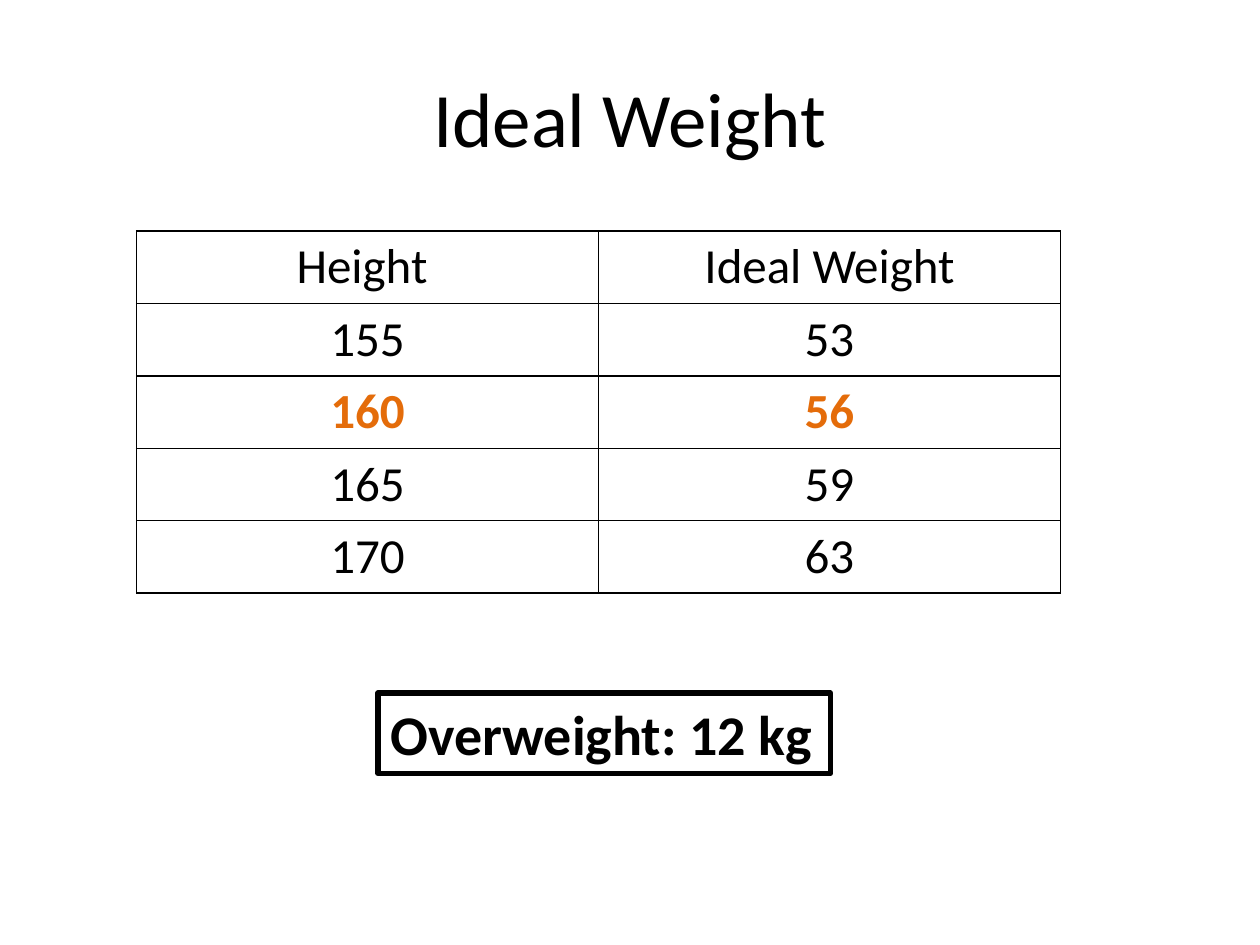
from lxml import etree
from pptx import Presentation
from pptx.dml.color import RGBColor
from pptx.enum.text import MSO_ANCHOR, PP_ALIGN
from pptx.oxml.ns import qn
from pptx.util import Pt

CENTER, LEFT = PP_ALIGN.CENTER, PP_ALIGN.LEFT
MIDDLE = MSO_ANCHOR.MIDDLE

FONT = "Calibri"
BLACK, WHITE, ORANGE = "000000", "FFFFFF", "E46C0A"

TITLE = "Ideal Weight"
WEIGHTS = [
    ("Height ", "Ideal Weight"),
    ("155", "53"),
    ("160", "56"),
    ("165", "59"),
    ("170", "63"),
]
HIGHLIGHTED_ROW = 2
RESULT = "Overweight: 12 kg"

TABLE_LEFT, TABLE_TOP = 78, 132
COLUMN_WIDTH, ROW_HEIGHT = 264, 41.4


def rgb(color):
    return RGBColor.from_string(color)


def write(frame, text, size, color=BLACK, bold=False, align=CENTER):
    frame.text = text
    paragraph = frame.paragraphs[0]
    paragraph.alignment = align
    font = paragraph.runs[0].font
    font.name, font.size, font.bold = FONT, Pt(size), bold
    font.color.rgb = rgb(color)


def add_borders(cell, color, width):
    properties = cell._tc.get_or_add_tcPr()
    for position, side in enumerate(("a:lnL", "a:lnR", "a:lnT", "a:lnB")):
        line = etree.Element(qn(side), w=str(Pt(width)))
        fill = etree.SubElement(line, qn("a:solidFill"))
        etree.SubElement(fill, qn("a:srgbClr"), val=color)
        properties.insert(position, line)


prs = Presentation()
prs.slide_width, prs.slide_height = Pt(720), Pt(540)
slide = prs.slides.add_slide(prs.slide_layouts[6])

title = slide.shapes.add_textbox(Pt(36), Pt(21.6), Pt(648), Pt(90))
title.text_frame.word_wrap = True
title.text_frame.vertical_anchor = MIDDLE
write(title.text_frame, TITLE, 44)

column_count, row_count = len(WEIGHTS[0]), len(WEIGHTS)
table = slide.shapes.add_table(
    row_count, column_count, Pt(TABLE_LEFT), Pt(TABLE_TOP),
    Pt(COLUMN_WIDTH * column_count), Pt(ROW_HEIGHT * row_count),
).table
table.first_row = table.horz_banding = False
for r, values in enumerate(WEIGHTS):
    highlighted = r == HIGHLIGHTED_ROW
    for c, value in enumerate(values):
        cell = table.cell(r, c)
        cell.fill.background()
        add_borders(cell, BLACK, 1)
        write(cell.text_frame, value, 28, ORANGE if highlighted else BLACK, highlighted)

result = slide.shapes.add_textbox(Pt(216), Pt(396), Pt(258.5), Pt(46))
result.fill.solid()
result.fill.fore_color.rgb = rgb(WHITE)
result.line.color.rgb = rgb(BLACK)
result.line.width = Pt(3)
result.text_frame.word_wrap = False
write(result.text_frame, RESULT, 32, bold=True, align=LEFT)

prs.save("out.pptx")
